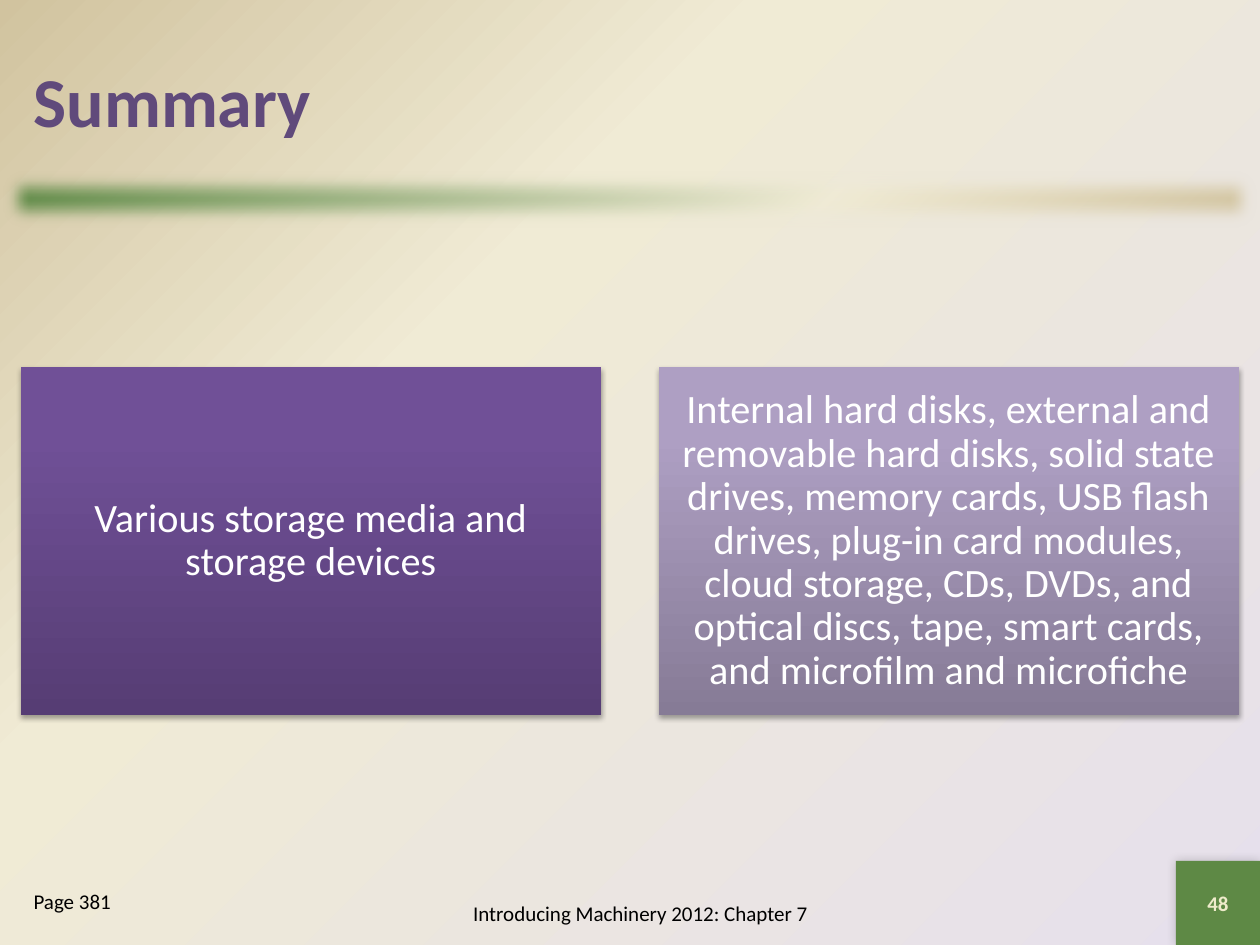
import pptx
import pptx.util
import pptx.dml.color
import pptx.enum.shapes
import pptx.enum.text
import pptx.oxml
import pptx.oxml.ns
from lxml import etree

RGB = pptx.dml.color.RGBColor
ALIGN = pptx.enum.text.PP_ALIGN
ANCHOR = pptx.enum.text.MSO_ANCHOR
qn = pptx.oxml.ns.qn

PURPLE = RGB(0x60, 0x4A, 0x7B)
GREEN = RGB(0x5E, 0x89, 0x45)
CREAM = RGB(0xF0, 0xEB, 0xD5)
SAND = RGB(0xD1, 0xC3, 0x9F)
LILAC = RGB(0xE6, 0xE0, 0xEC)
PALE = RGB(0xEE, 0xEB, 0xCA)
WHITE = RGB(0xFF, 0xFF, 0xFF)
BLACK = RGB(0, 0, 0)
DARK_BOX = [(0, RGB(0x56, 0x3D, 0x74)), (80, RGB(0x70, 0x50, 0x97)), (100, RGB(0x70, 0x4F, 0x99))]
LIGHT_BOX = [(0, RGB(0x86, 0x7B, 0x96)), (80, RGB(0xAE, 0x9F, 0xC3)), (100, RGB(0xAE, 0x9F, 0xC4))]

TITLE = "Summary"
BOXES = [
    ("Various storage media and storage devices", DARK_BOX),
    ("Internal hard disks, external and removable hard disks, solid state drives, "
     "memory cards, USB flash drives, plug-in card modules, cloud storage, CDs, DVDs, "
     "and optical discs, tape, smart cards, and microfilm and microfiche", LIGHT_BOX),
]
FOOTER = "Introducing Machinery 2012: Chapter 7"
NUMBER = "48"
PAGE = "Page 381"

SCALE = 914400 // 126
W, H = 1260, 945
MARGIN, BOX_TOP, BOX_W, BOX_H, GAP = 21, 367, 580, 348, 58
SQUARE = 84


def px(*values):
    return [pptx.util.Emu(v * SCALE) for v in values]


def add(parent, tag, **attrs):
    return etree.SubElement(parent, qn(tag), {k: str(v) for k, v in attrs.items()})


def gradient(fill, element, stops, angle=None):
    fill.gradient()
    grad = next(element.iter(qn("a:gradFill")))
    for child in list(grad):
        grad.remove(child)
    stop_list = add(grad, "a:gsLst")
    for pos, color in stops:
        add(add(stop_list, "a:gs", pos=pos * 1000), "a:srgbClr", val=color)
    if angle is None:
        circle = add(grad, "a:path", path="circle")
        add(circle, "a:fillToRect", l=100000, t=100000)
    else:
        add(grad, "a:lin", ang=angle * 60000, scaled=0)


def effect(sp, tag, **attrs):
    sp.shadow.inherit = False
    return add(sp.element.spPr.find(qn("a:effectLst")), tag, **attrs)


def shadow(sp, alpha, blur, dist, angle):
    outer = effect(sp, "a:outerShdw", blurRad=int(blur * 12700), dist=int(dist * 12700),
                   dir=angle * 60000, rotWithShape=0)
    add(add(outer, "a:srgbClr", val=BLACK), "a:alpha", val=alpha * 1000)


def rectangle(s, *box):
    sp = s.shapes.add_shape(pptx.enum.shapes.MSO_SHAPE.RECTANGLE, *px(*box))
    sp.line.fill.background()
    return sp


def write(sp, text, size, color, align=ALIGN.CENTER, anchor=ANCHOR.MIDDLE, bold=False):
    tf = sp.text_frame
    tf.word_wrap = True
    tf.auto_size = pptx.enum.text.MSO_AUTO_SIZE.NONE
    tf.vertical_anchor = anchor
    p = tf.paragraphs[0]
    p.text = text
    p.alignment = align
    p.font.name = "Calibri"
    p.font.size = pptx.util.Pt(size)
    p.font.bold = bold
    p.font.color.rgb = color
    return p


def place(sp, *box):
    sp.left, sp.top, sp.width, sp.height = px(*box)


def main():
    prs = pptx.Presentation()
    prs.slide_width, prs.slide_height = px(W, H)
    s = prs.slides.add_slide(prs.slide_layouts[1])
    gradient(s.background.fill, s.element, [(0, LILAC), (65, CREAM), (100, SAND)])

    title, page = s.placeholders
    place(title, MARGIN, MARGIN, W - 2 * MARGIN, 179 - MARGIN)
    write(title, TITLE, 40, PURPLE, ALIGN.LEFT, bold=True)

    bar = rectangle(s, 0, 168, W, 63)
    gradient(bar.fill, bar.element, [(0, GREEN), (65, CREAM), (100, SAND)], 45)
    effect(bar, "a:softEdge", rad=127000)

    for i, (text, stops) in enumerate(BOXES):
        sp = rectangle(s, MARGIN + i * (BOX_W + GAP), BOX_TOP, BOX_W, BOX_H)
        gradient(sp.fill, sp.element, stops, 270)
        shadow(sp, 35, 3.1, 1.8, 90)
        p = write(sp, text, 23, WHITE)
        p.line_spacing = 0.9
        tf = sp.text_frame
        tf.margin_left = tf.margin_right = tf.margin_top = tf.margin_bottom = pptx.util.Inches(0.1)

    footer = s.shapes.add_textbox(*px(378, 882, 525, 63))
    write(footer, FOOTER, 12, BLACK)

    square = rectangle(s, W - SQUARE, H - SQUARE, SQUARE, SQUARE)
    square.fill.solid()
    square.fill.fore_color.rgb = GREEN
    shadow(square, 20, 6, 0, 225)
    write(square, NUMBER, 12, PALE, bold=True)

    place(page, MARGIN, 882, 231, 63)
    p = write(page, PAGE, 12, BLACK, ALIGN.LEFT, ANCHOR.TOP)
    pPr = p._p.get_or_add_pPr()
    pPr.set("marL", "342900")
    pPr.set("indent", "-342900")
    pPr.insert_element_before(pptx.oxml.parse_xml(
        '<a:buNone xmlns:a="http://schemas.openxmlformats.org/drawingml/2006/main"/>'), "a:defRPr")

    prs.save("out.pptx")


if __name__ == "__main__":
    main()
